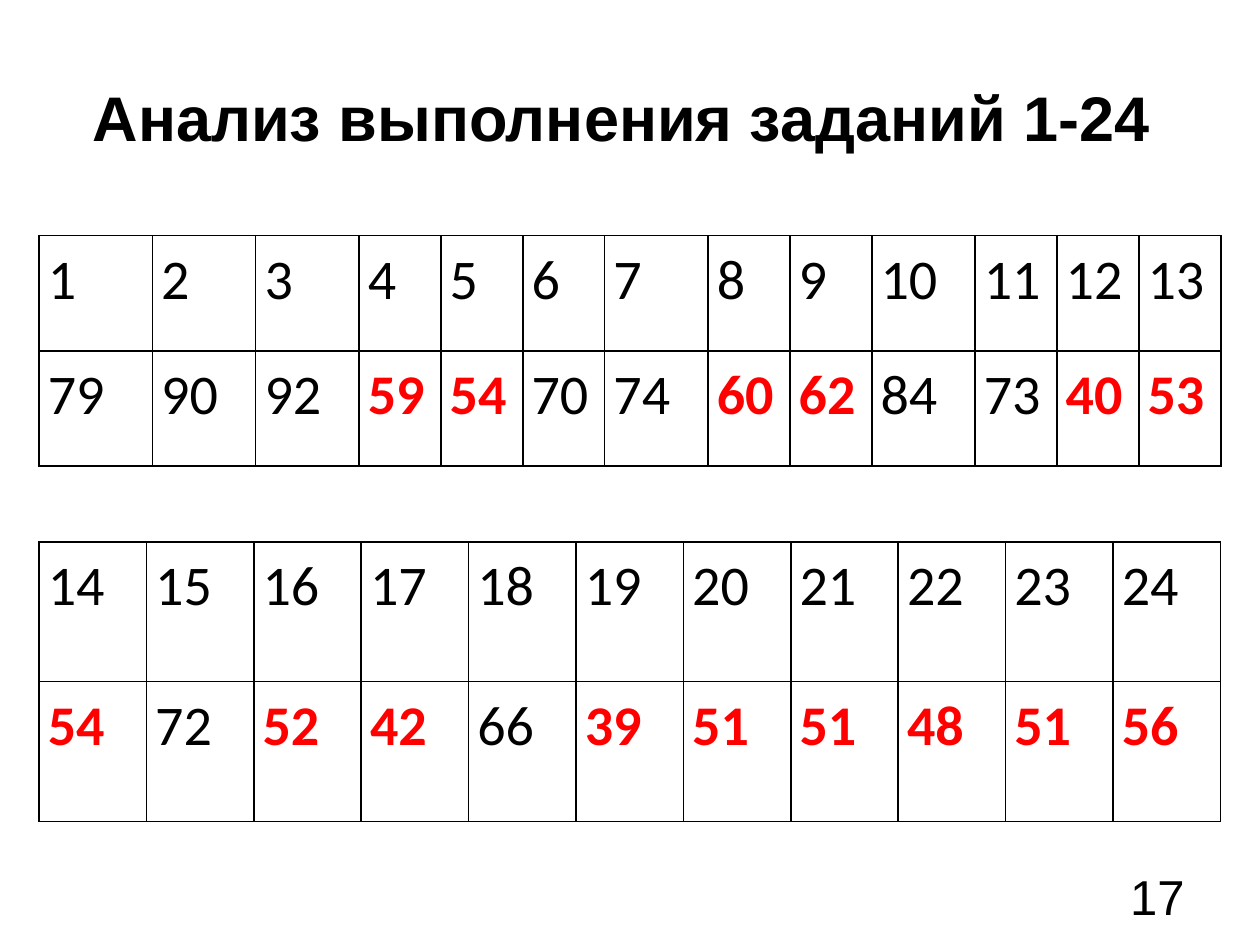
import lxml.etree
import pptx
import pptx.dml.color
import pptx.enum.text
import pptx.oxml.ns
import pptx.util
from pptx.util import Inches

COLORS = {"text": "000000", "low": "FF0000", "border": "000000"}
LOW_SCORE = 65  # results below this are highlighted

# Results by task number
FIRST_SCORES = [79, 90, 92, 59, 54, 70, 74, 60, 62, 84, 73, 40, 53]
SECOND_SCORES = [54, 72, 52, 42, 66, 39, 51, 51, 48, 51, 56]
WIDE, NARROW = 0.82, 0.65
FIRST_WIDTHS = [0.9] + [WIDE] * 2 + [NARROW] * 3 + [WIDE] + [NARROW] * 2 + [WIDE] + [NARROW] * 3


def add_run(p, text, font, size, color="text", bold=False):
    r = p.add_run()
    r.text = text
    r.font.name = font
    r.font.size = pptx.util.Pt(size)
    r.font.bold = bold
    r.font.color.rgb = pptx.dml.color.RGBColor.from_string(COLORS[color])


def set_borders(cell):
    tc_pr = cell._tc.get_or_add_tcPr()
    qn = pptx.oxml.ns.qn
    for i, side in enumerate(("lnL", "lnR", "lnT", "lnB")):
        ln = lxml.etree.Element(qn(f"a:{side}"), w=str(pptx.util.Pt(1)))
        fill = lxml.etree.SubElement(ln, qn("a:solidFill"))
        lxml.etree.SubElement(fill, qn("a:srgbClr"), val=COLORS["border"])
        tc_pr.insert(i, ln)


def fill_cell(cell, text, low=False):
    cell.fill.background()
    set_borders(cell)
    cell.margin_left = cell.margin_right = Inches(0.07)
    cell.margin_top = cell.margin_bottom = 0
    p = cell.text_frame.paragraphs[0]
    p.line_spacing = 1.15
    add_run(p, text, "Calibri", 32, "low" if low else "text", low)


def add_title(s, left, top, width, height):
    sp = s.shapes.title
    sp.left, sp.top, sp.width, sp.height = map(Inches, (left, top, width, height))
    tf = sp.text_frame
    tf.vertical_anchor = pptx.enum.text.MSO_ANCHOR.MIDDLE
    p = tf.paragraphs[0]
    p.alignment = pptx.enum.text.PP_ALIGN.CENTER
    add_run(p, "Анализ выполнения заданий 1-24 ", "Arial", 36, bold=True)


def add_scores(s, left, top, width, height, first_task, scores, widths):
    table = s.shapes.add_table(2, len(scores), *map(Inches, (left, top, width, height))).table
    table.first_row = table.horz_banding = False
    for row in table.rows:
        row.height = Inches(height / 2)
    for i, (score, col_width) in enumerate(zip(scores, widths)):
        table.columns[i].width = Inches(col_width)
        fill_cell(table.cell(0, i), str(first_task + i))
        fill_cell(table.cell(1, i), str(score), score < LOW_SCORE)


def add_page_number(s, left, top, width, height):
    tf = s.shapes.add_textbox(*map(Inches, (left, top, width, height))).text_frame
    tf.word_wrap = True
    p = tf.paragraphs[0]
    p.alignment = pptx.enum.text.PP_ALIGN.RIGHT
    add_run(p, "17", "Arial", 28)


def main():
    prs = pptx.Presentation()
    prs.slide_width, prs.slide_height = Inches(10), Inches(7.5)
    s = prs.slides.add_slide(prs.slide_layouts[5])

    # Heading
    add_title(s, 0.5, 0.3, 9, 1.25)

    # Tasks 1-13 and 14-24
    left, width = 0.31, 9.38
    add_scores(s, left, 1.87, width, 1.83, 1, FIRST_SCORES, FIRST_WIDTHS)
    count = len(SECOND_SCORES)
    add_scores(s, left, 4.3, width, 2.22, len(FIRST_SCORES) + 1, SECOND_SCORES, [width / count] * count)

    # Footer
    add_page_number(s, 7.17, 6.83, 2.33, 0.52)

    prs.save("out.pptx")


if __name__ == "__main__":
    main()
